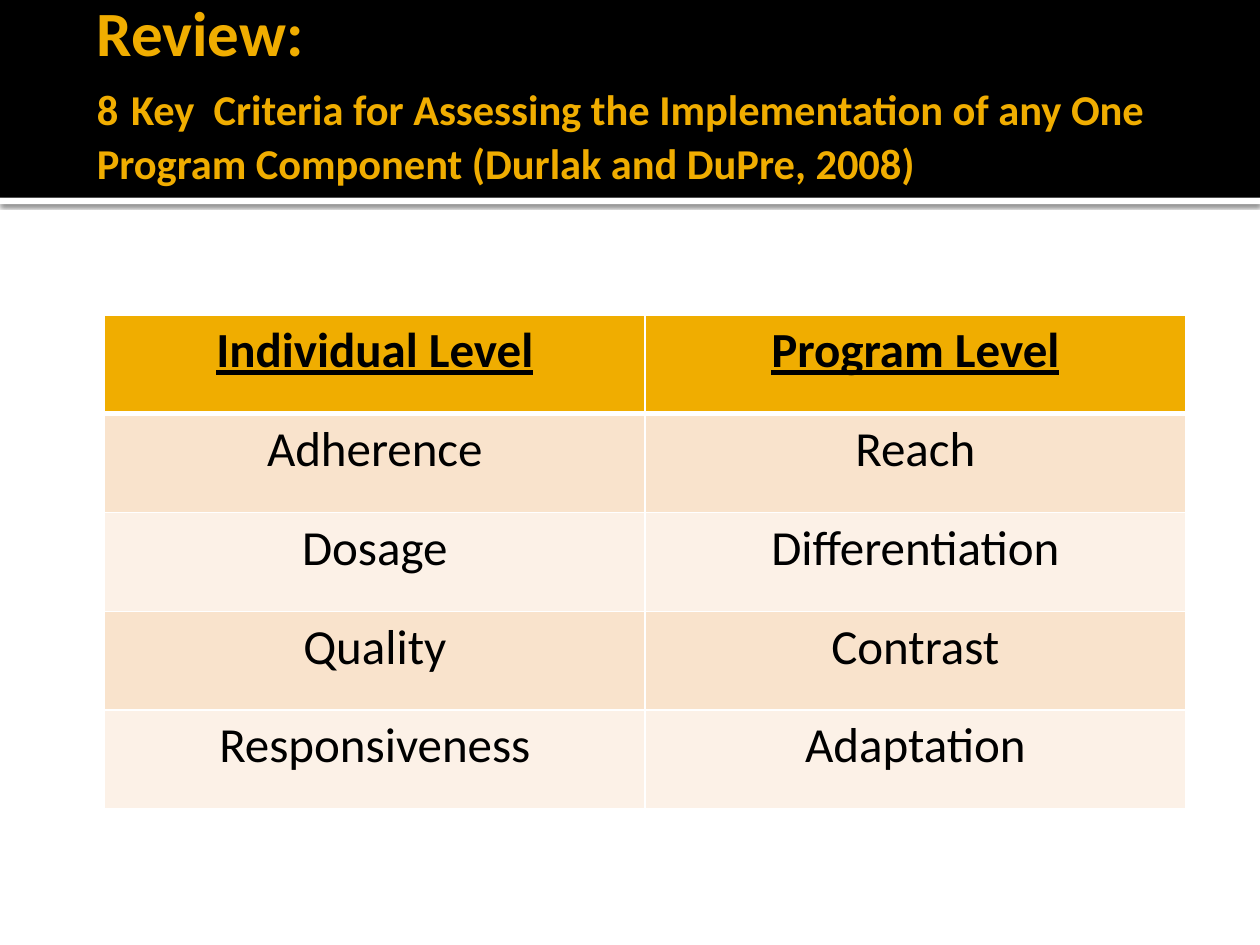
from lxml.etree import SubElement as Sub
from pptx import Presentation
from pptx.dml.color import RGBColor
from pptx.enum.shapes import MSO_SHAPE as Shape
from pptx.enum.text import MSO_ANCHOR as Anchor, PP_ALIGN as Align
from pptx.oxml.ns import qn
from pptx.util import Inches, Pt

GOLD, BLACK, WHITE = "F0AD00", "000000", "FFFFFF"
BANDS = ["F9E3CC", "FCF1E7"]
TITLE = [
    ("Review:", 36),
    ("8", 24.3),
    (" ", 32.4),
    ("Key  Criteria for Assessing the Implementation of any One "
     "Program Component (Durlak and DuPre, 2008)", 24.3),
]
ROWS = [
    ("Individual Level", "Program Level"),
    ("Adherence", "Reach"),
    ("Dosage", "Differentiation"),
    ("Quality", "Contrast"),
    ("Responsiveness", "Adaptation"),
]


def paint(fill, color):
    fill.solid()
    fill.fore_color.rgb = RGBColor.from_string(color)


def style(run, size, color, bold):
    font = run.font
    font.name, font.size, font.bold = "Calibri", Pt(size), bold
    font.color.rgb = RGBColor.from_string(color)


def add_bar(slide, left, top, width, height, color):
    bar = slide.shapes.add_shape(Shape.RECTANGLE, left, top, width, height)
    bar.shadow.inherit = False
    paint(bar.fill, color)
    bar.line.fill.background()
    return bar


def add_shade(bar):
    """Cast a soft shadow straight down from the bar."""
    effects = bar.element.spPr.find(qn("a:effectLst"))
    shade = Sub(effects, qn("a:outerShdw"), blurRad=str(Pt(2.5)),
                dist=str(Pt(0.8)), dir="5400000", algn="t", rotWithShape="0")
    color = Sub(shade, qn("a:srgbClr"), val=BLACK)
    Sub(color, qn("a:alpha"), val="60000")


def add_header(slide, left, top, width, height):
    strip = add_bar(slide, left, top + height, width, Inches(0.05), WHITE)
    add_shade(strip)
    add_bar(slide, left, top, width, height, BLACK)

    box = slide.shapes.add_textbox(left + Inches(0.67), top + Inches(0.01),
                                   Inches(9), Inches(1.42))
    frame = box.text_frame
    frame.word_wrap = True
    frame.vertical_anchor = Anchor.MIDDLE
    frame.margin_right = Inches(0.05)
    para = frame.paragraphs[0]
    for i, (text, size) in enumerate(TITLE):
        if i == 1:
            para.add_line_break()
        run = para.add_run()
        run.text = text
        style(run, size, GOLD, True)


def add_edges(cell, below):
    """Draw white cell borders, with the given width in points below."""
    props = cell._tc.get_or_add_tcPr()
    for side, width in zip("LRTB", (1, 1, 1, below)):
        line = Sub(props, qn(f"a:ln{side}"), w=str(Pt(width)))
        Sub(Sub(line, qn("a:solidFill")), qn("a:srgbClr"), val=WHITE)


def add_levels(slide, left, top, width, height):
    table = slide.shapes.add_table(len(ROWS), len(ROWS[0]), left, top,
                                   width, height).table
    for r, row in enumerate(ROWS):
        head = r == 0
        for c, text in enumerate(row):
            cell = table.cell(r, c)
            add_edges(cell, 3 if head else 1)
            paint(cell.fill, GOLD if head else BANDS[(r - 1) % 2])
            para = cell.text_frame.paragraphs[0]
            para.text = text
            para.alignment = Align.CENTER
            run = para.runs[0]
            style(run, 28, BLACK, head)
            run.font.underline = head


def main():
    deck = Presentation()
    deck.slide_width, deck.slide_height = Inches(10), Inches(7.5)
    slide = deck.slides.add_slide(deck.slide_layouts[6])
    add_header(slide, 0, 0, deck.slide_width, Inches(1.57))
    add_levels(slide, Inches(0.83), Inches(2.5), Inches(8.58), Inches(3.92))
    deck.save("out.pptx")


if __name__ == "__main__":
    main()
